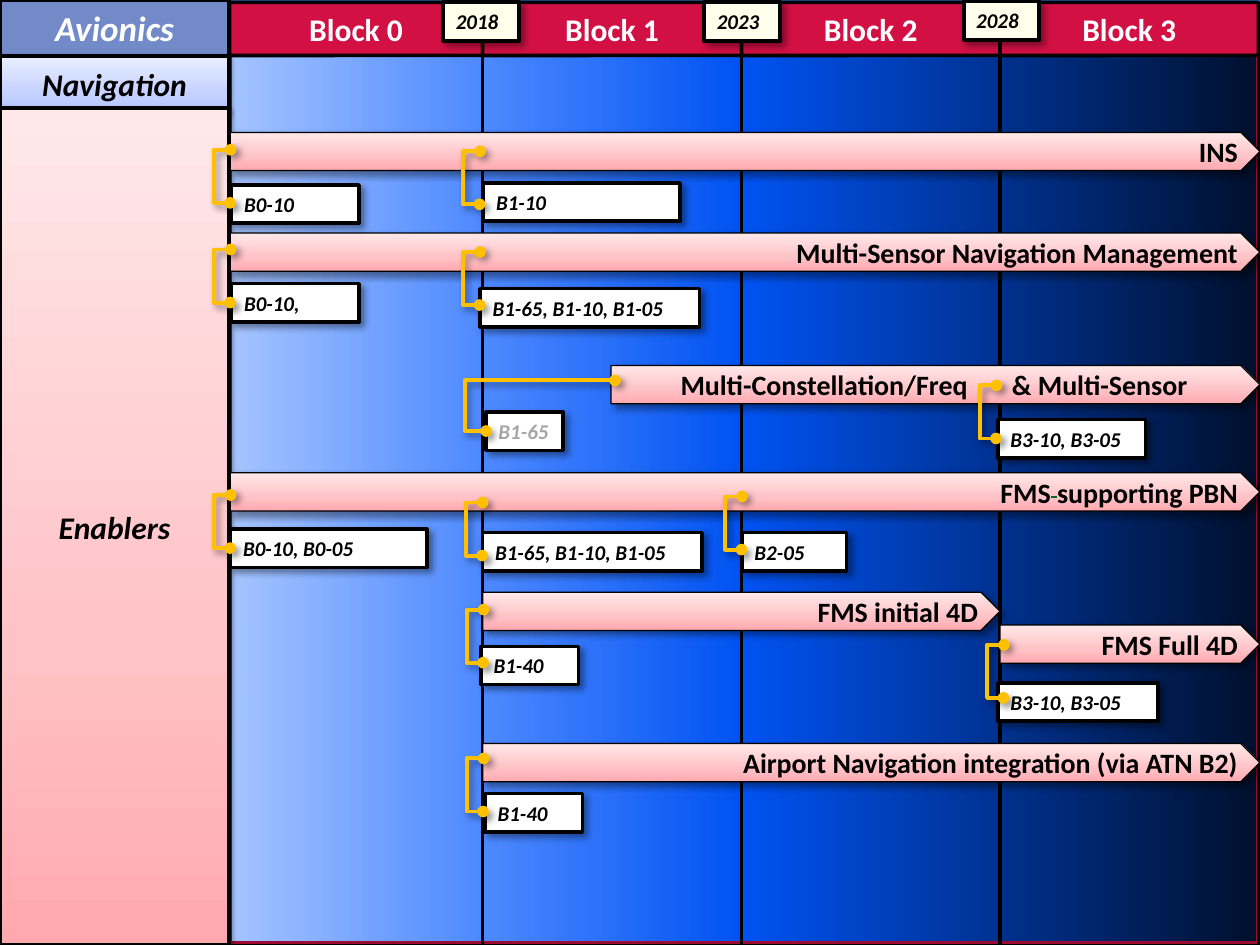
from lxml import etree
from pptx import Presentation
from pptx.dml.color import RGBColor
from pptx.enum import shapes, text
from pptx.oxml.ns import qn
from pptx.util import Cm, Pt

PINK = [(0, "FFA8AF"), (35, "FFC2C6"), (100, "FFE8E9")]
LAVENDER = [(0, "B0C1FF"), (35, "C6D2FF"), (100, "E9EEFF")]
BLUES = [(0, "A5C4FF"), (25, "4C88FF"), (50, "0052F1"), (100, "00102E")]
# Shadows: blur and distance in points, angle in degrees, opacity in percent
SLANTED = (4, 3, 45, 40)
BELOW = (3.1, 1.6, 90, 38)
color = RGBColor.from_string


def set_effects(properties, shadow=None):
    """Replace theme effects by the given shadow, or by none."""
    effects = etree.SubElement(properties, qn("a:effectLst"))
    if shadow:
        blur, distance, angle, opacity = shadow
        outer = etree.SubElement(
            effects, qn("a:outerShdw"), blurRad=str(Pt(blur)), dist=str(Pt(distance)),
            dir=str(angle * 60000), algn="tl", rotWithShape="0")
        black = etree.SubElement(outer, qn("a:srgbClr"), val="000000")
        etree.SubElement(black, qn("a:alpha"), val=str(opacity * 1000))


def format_shape(shape, content="", fill=None, angle=90, line="000000", width=2, shadow=None,
                 size=18, font_color="000000", italic=False,
                 align=text.PP_ALIGN.CENTER, anchor=text.MSO_ANCHOR.MIDDLE):
    """Format a shape; fill is a colour, a list of gradient stops or None."""
    if fill is None:
        shape.fill.background()
    elif isinstance(fill, str):
        shape.fill.solid()
        shape.fill.fore_color.rgb = color(fill)
    else:
        shape.fill.gradient()
        shape.fill.gradient_angle = angle
        stops = shape._element.spPr.find(".//" + qn("a:gsLst"))
        stops.clear()
        for position, value in fill:
            stop = etree.SubElement(stops, qn("a:gs"), pos=str(position * 1000))
            etree.SubElement(stop, qn("a:srgbClr"), val=value)
    shape.line.color.rgb = color(line)
    shape.line.width = Pt(width)
    set_effects(shape._element.spPr, shadow)
    if content:
        frame = shape.text_frame
        frame.word_wrap = True
        frame.auto_size = text.MSO_AUTO_SIZE.NONE
        frame.vertical_anchor = anchor
        paragraph = frame.paragraphs[0]
        paragraph.alignment = align
        for part in [content] if isinstance(content, str) else content:
            run = paragraph.add_run()
            run.text = part
            run.font.name = "Calibri"
            run.font.size = Pt(size)
            run.font.bold = True
            run.font.italic = italic
            run.font.color.rgb = color(font_color)
    return shape


presentation = Presentation()
presentation.slide_width, presentation.slide_height = Cm(25.4), Cm(19.05)
slide = presentation.slides.add_slide(presentation.slide_layouts[5])
slide.background.fill.solid()
slide.background.fill.fore_color.rgb = color("2C6ABA")
add_shape = slide.shapes.add_shape
RECTANGLE = shapes.MSO_SHAPE.RECTANGLE

# Blue time area
area = add_shape(RECTANGLE, Cm(4.65), Cm(1.02), Cm(20.7), Cm(17.98))
format_shape(area, fill=BLUES, angle=0, line="9C0C32")

# Block columns and their headers
edges = [4.63, 9.73, 14.95, 20.16, 25.37]
columns = list(zip(edges, edges[1:]))
for left, right in columns:
    format_shape(add_shape(RECTANGLE, Cm(left), Cm(0.53), Cm(right - left), Cm(18.54)))
for number, (left, right) in enumerate(columns):
    header = add_shape(shapes.MSO_SHAPE.ROUNDED_RECTANGLE,
                       Cm(left), Cm(0.05), Cm(right - left), Cm(1.07))
    header.adjustments[0] = 0.02
    format_shape(header, f"Block {number}", fill="D31044", font_color="FFFFFF")

# Year tags on the column borders
for year, left, top in [("2018", 8.94, 0.05), ("2023", 14.2, 0.05), ("2028", 19.43, 0.03)]:
    tag = add_shape(RECTANGLE, Cm(left), Cm(top), Cm(1.52), Cm(0.77))
    format_shape(tag, year, fill="FFFFEB", width=2.25, shadow=SLANTED, size=12, italic=True,
                 align=text.PP_ALIGN.LEFT, anchor=text.MSO_ANCHOR.TOP)

# Title and row names on the left
title = slide.shapes.title
title.left, title.top, title.width, title.height = Cm(0), Cm(0), Cm(4.62), Cm(1.12)
format_shape(title, "Avionics", fill="738AC8", width=2.25, size=20,
             font_color="FFFFFF", italic=True)
for name, top, height, fill in [("Navigation", 1.14, 1.12, LAVENDER),
                                ("Enablers", 2.18, 16.87, PINK)]:
    row = add_shape(RECTANGLE, Cm(0), Cm(top), Cm(4.62), Cm(height))
    format_shape(row, name, fill=fill, width=2.25, shadow=BELOW, italic=True)

# Enabler bars: text, left, top, right
bars = {}
for name, left, top, right in [
    ("INS", 4.64, 2.67, 25.4),
    ("Multi-Sensor Navigation Management", 4.64, 4.7, 25.4),
    ("Multi-Constellation/Freq\t& Multi-Sensor", 12.32, 7.37, 25.4),
    (("FMS", " ", "supporting PBN"), 4.64, 9.53, 25.4),
    ("FMS initial 4D", 9.73, 11.94, 20.16),
    ("FMS Full 4D", 20.16, 12.6, 25.4),
    ("Airport Navigation integration (via ATN B2)", 9.73, 14.99, 25.4),
]:
    bar = add_shape(shapes.MSO_SHAPE.PENTAGON, Cm(left), Cm(top), Cm(right - left), Cm(0.77))
    bars[name] = format_shape(bar, name, fill=PINK, width=0.75, shadow=SLANTED, size=16,
                              align=text.PP_ALIGN.RIGHT)

# The two-part bar leaves a gap for the 2028 border
frame = bars["Multi-Constellation/Freq\t& Multi-Sensor"].text_frame
frame.margin_left = Cm(1.4)
paragraph = frame.paragraphs[0]
paragraph.alignment = text.PP_ALIGN.LEFT
tabs = etree.SubElement(paragraph._p.get_or_add_pPr(), qn("a:tabLst"))
etree.SubElement(tabs, qn("a:tab"), pos=str(Cm(6.68)), algn="l")

# Struck green space in the PBN bar
space = bars[("FMS", " ", "supporting PBN")].text_frame.paragraphs[0].runs[1]
space.font.color.rgb = color("00682F")
space._r.get_or_add_rPr().set("strike", "sngStrike")

# Module labels: text, left, top, width
for name, left, top, width in [
    ("B0-10", 4.67, 3.73, 2.57),
    ("B1-10", 9.75, 3.69, 3.96),
    ("B0-10,", 4.67, 5.72, 2.57),
    ("B1-65, B1-10, B1-05", 9.68, 5.82, 4.42),
    ("B1-65", 9.8, 8.31, 1.55),
    ("B3-10, B3-05", 20.12, 8.46, 2.97),
    ("B0-10, B0-05", 4.65, 10.67, 3.96),
    ("B1-65, B1-10, B1-05", 9.73, 10.74, 4.42),
    ("B2-05", 14.96, 10.74, 2.11),
    ("B1-40", 9.7, 13.03, 1.96),
    ("B3-10, B3-05", 20.12, 13.77, 3.23),
    ("B1-40", 9.78, 16, 1.96),
]:
    label = add_shape(RECTANGLE, Cm(left), Cm(top), Cm(width), Cm(0.77))
    format_shape(label, name, fill="FFFFFF", shadow=SLANTED, size=12, italic=True,
                 font_color="A6A6A6" if name == "B1-65" else "000000",
                 align=text.PP_ALIGN.LEFT)
    label.text_frame.margin_right = 0

# Yellow brackets from bar to label: start x, start y, end x, end y, bend x
starts = [(4.65, 3.02), (9.68, 3.05), (4.65, 5.03), (9.68, 5.08), (20.09, 7.77), (4.65, 9.98),
          (9.73, 10.13), (14.96, 10.01), (9.75, 12.29), (20.24, 13), (9.75, 15.29)]
brackets = [(x, y, x - 0.01, y + 1.07, x - 0.34) for x, y in starts]
brackets.append((12.4, 7.67, 9.8, 8.69, 9.37))
for x, y, end_x, end_y, bend in brackets:
    bracket = slide.shapes.add_connector(shapes.MSO_CONNECTOR.ELBOW,
                                         Cm(x), Cm(y), Cm(end_x), Cm(end_y))
    bracket.line.color.rgb = color("FFC000")
    bracket.line.width = Pt(2.25)
    properties = bracket._element.spPr
    geometry = properties.find(qn("a:prstGeom"))
    guides = geometry.find(qn("a:avLst"))
    ratio = round((x - bend) / (x - end_x) * 100000)
    etree.SubElement(guides, qn("a:gd"), name="adj1", fmla=f"val {ratio}")
    for end in ("a:headEnd", "a:tailEnd"):
        etree.SubElement(properties.find(qn("a:ln")), qn(end), type="oval")
    set_effects(properties, SLANTED)

presentation.save("out.pptx")
